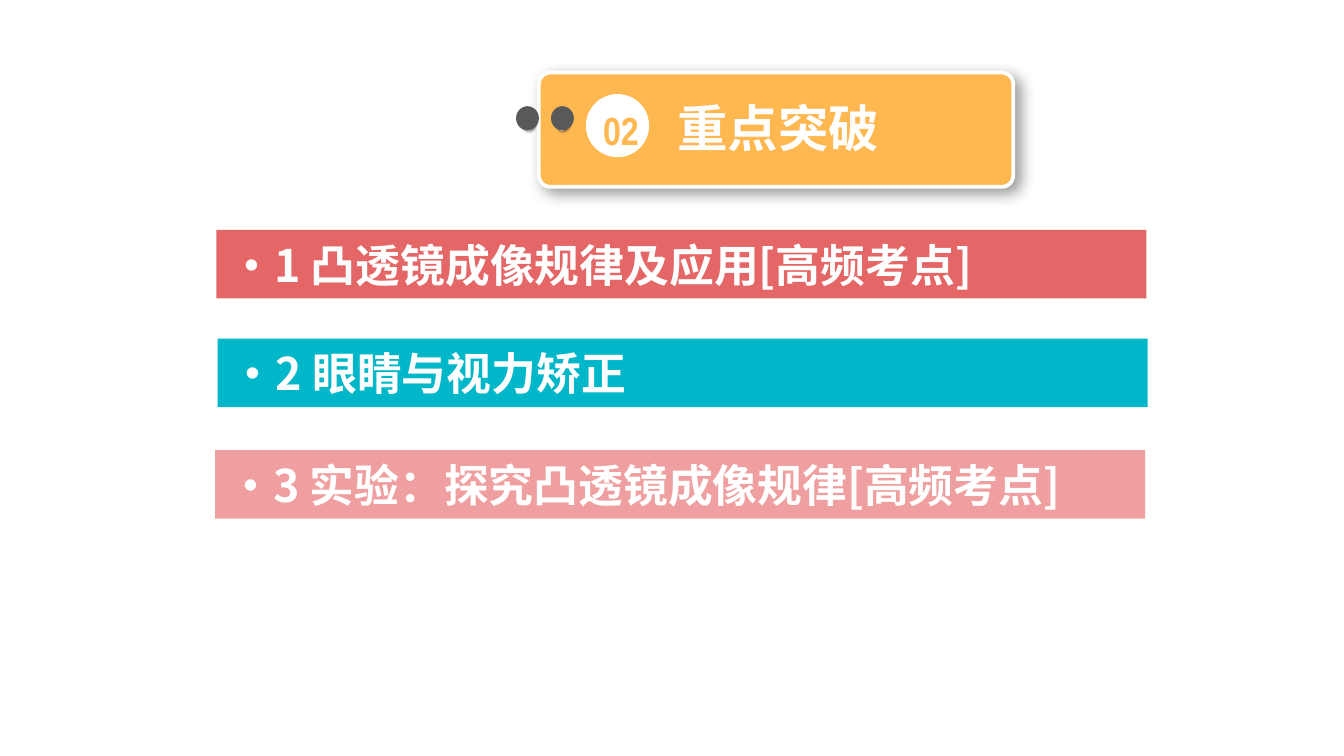
from dataclasses import dataclass

from lxml.etree import SubElement
from pptx import Presentation
from pptx.dml.color import RGBColor
from pptx.enum.shapes import MSO_SHAPE
from pptx.enum.text import MSO_ANCHOR, MSO_AUTO_SIZE, PP_ALIGN
from pptx.oxml.ns import qn
from pptx.util import Inches, Pt

SLIDE_WIDTH = 10
SLIDE_HEIGHT = SLIDE_WIDTH * 9 / 16
CJK_FONT = "Noto Sans CJK SC"
NUMBER_FONT = "Arial Narrow"
WHITE, AMBER, DARK_GRAY = "FFFFFF", "FFB850", "595959"
METAL_STOPS = [(0, "FFFFFF"), (17, "A6A6A6"), (35, "F2F2F2"),
               (55, "A6A6A6"), (75, "F2F2F2"), (100, "A6A6A6")]


@dataclass
class Box:
    left: float
    top: float
    width: float
    height: float

    def lengths(self):
        return [Inches(v) for v in (self.left, self.top, self.width, self.height)]


@dataclass
class Topic:
    text: str
    left: float
    top: float
    color: str


@dataclass
class TextStyle:
    size: float
    color: str = WHITE
    font: str = CJK_FONT
    align: PP_ALIGN = PP_ALIGN.CENTER


TOPICS = [
    Topic("·1 凸透镜成像规律及应用[高频考点]", 1.61, 1.71, "E56666"),
    Topic("·2 眼睛与视力矫正", 1.62, 2.52, "00B7CA"),
    Topic("·3 实验：探究凸透镜成像规律[高频考点]", 1.6, 3.35, "EF9F9F"),
]


def rgb(color: str) -> RGBColor:
    return RGBColor.from_string(color)


def add_filled(slide, kind: MSO_SHAPE, box: Box, color: str):
    shape = slide.shapes.add_shape(kind, *box.lengths())
    shape.shadow.inherit = False
    shape.fill.solid()
    shape.fill.fore_color.rgb = rgb(color)
    shape.line.fill.background()
    return shape


def add_shadow(shape, blur: float, distance: float) -> None:
    effects = shape._element.spPr.find(qn("a:effectLst"))
    shadow = SubElement(effects, qn("a:outerShdw"), blurRad=str(Pt(blur)),
                        dist=str(Pt(distance)), dir="2700000", algn="tl", rotWithShape="0")
    black = SubElement(shadow, qn("a:srgbClr"), val="000000")
    SubElement(black, qn("a:alpha"), val="40000")


def fill_metal(shape) -> None:
    shape.fill.gradient()
    shape.fill.gradient_angle = 315  # counter-clockwise, so 45 degrees clockwise
    stops = shape._element.spPr.find(qn("a:gradFill")).find(qn("a:gsLst"))
    for old_stop in list(stops):
        stops.remove(old_stop)
    for position, color in METAL_STOPS:
        stop = SubElement(stops, qn("a:gs"), pos=str(position * 1000))
        SubElement(stop, qn("a:srgbClr"), val=color)


def write_text(shape, text: str, style: TextStyle) -> None:
    frame = shape.text_frame
    frame_format = {
        "word_wrap": True, "auto_size": MSO_AUTO_SIZE.NONE,
        "vertical_anchor": MSO_ANCHOR.MIDDLE,
        "margin_left": Inches(0.1), "margin_right": Inches(0.1),
        "margin_top": Inches(0.05), "margin_bottom": Inches(0.05),
    }
    for name, value in frame_format.items():
        setattr(frame, name, value)
    paragraph = frame.paragraphs[0]
    paragraph.alignment = style.align
    paragraph.line_spacing = 1.0
    run = paragraph.add_run()
    run.text = text
    for name, value in {"size": Pt(style.size), "bold": True, "name": style.font}.items():
        setattr(run.font, name, value)
    run.font.color.rgb = rgb(style.color)
    SubElement(run._r.get_or_add_rPr(), qn("a:ea"), typeface=style.font)


def add_pin(slide, hole: Box, head: Box) -> None:
    metal = add_filled(slide, MSO_SHAPE.OVAL, hole, WHITE)
    fill_metal(metal)
    metal.rotation = 270
    add_shadow(metal, 1, 1)
    add_filled(slide, MSO_SHAPE.OVAL, head, DARK_GRAY)


def add_header(slide) -> None:
    # Card with its two pins
    card = add_filled(slide, MSO_SHAPE.ROUNDED_RECTANGLE, Box(4.01, 0.54, 3.53, 0.85), AMBER)
    card.adjustments[0] = 0.1
    card.line.color.rgb = rgb(WHITE)
    card.line.width = Pt(2)
    add_shadow(card, 8, 4)
    for hole_left, head_left in [(4.13, 4.1), (3.88, 3.84)]:
        add_pin(slide, Box(hole_left, 0.87, 0.1, 0.1), Box(head_left, 0.79, 0.17, 0.18))

    # Title, raised above the card
    title = slide.shapes.title
    title.left, title.top, title.width, title.height = Box(4.55, 0.67, 2.48, 0.56).lengths()
    write_text(title, "重点突破", TextStyle(27))
    slide.shapes._spTree.append(title._element)

    # Section number
    add_filled(slide, MSO_SHAPE.OVAL, Box(4.36, 0.7, 0.47, 0.47), WHITE)
    number = slide.shapes.add_textbox(*Box(4.34, 0.74, 0.56, 0.45).lengths())
    write_text(number, "02", TextStyle(21, AMBER, NUMBER_FONT))


def add_topic(slide, topic: Topic) -> None:
    bar = add_filled(slide, MSO_SHAPE.RECTANGLE, Box(topic.left, topic.top, 6.92, 0.51), topic.color)
    write_text(bar, topic.text, TextStyle(24, align=PP_ALIGN.LEFT))


def main() -> None:
    deck = Presentation()
    deck.slide_width, deck.slide_height = Inches(SLIDE_WIDTH), Inches(SLIDE_HEIGHT)
    slide = deck.slides.add_slide(deck.slide_layouts[5])
    add_header(slide)
    for topic in TOPICS:
        add_topic(slide, topic)
    deck.save("out.pptx")


if __name__ == "__main__":
    main()
